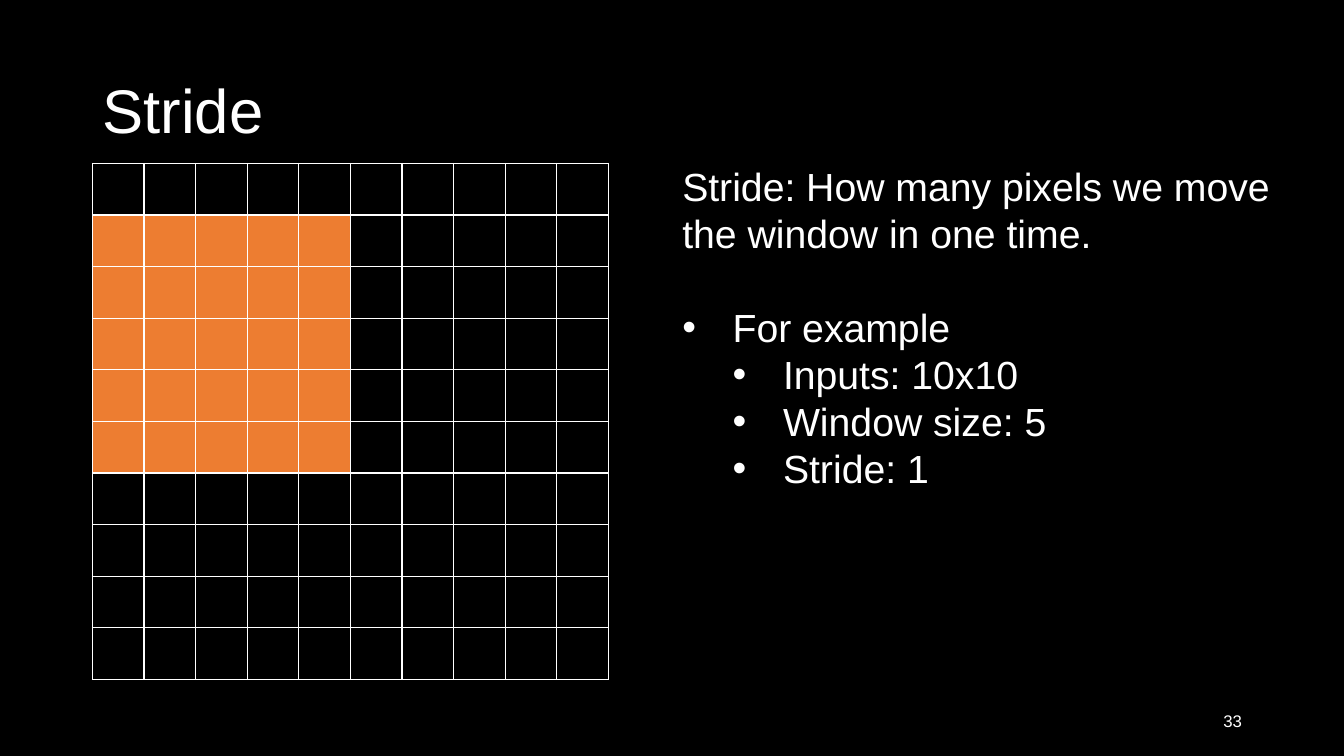
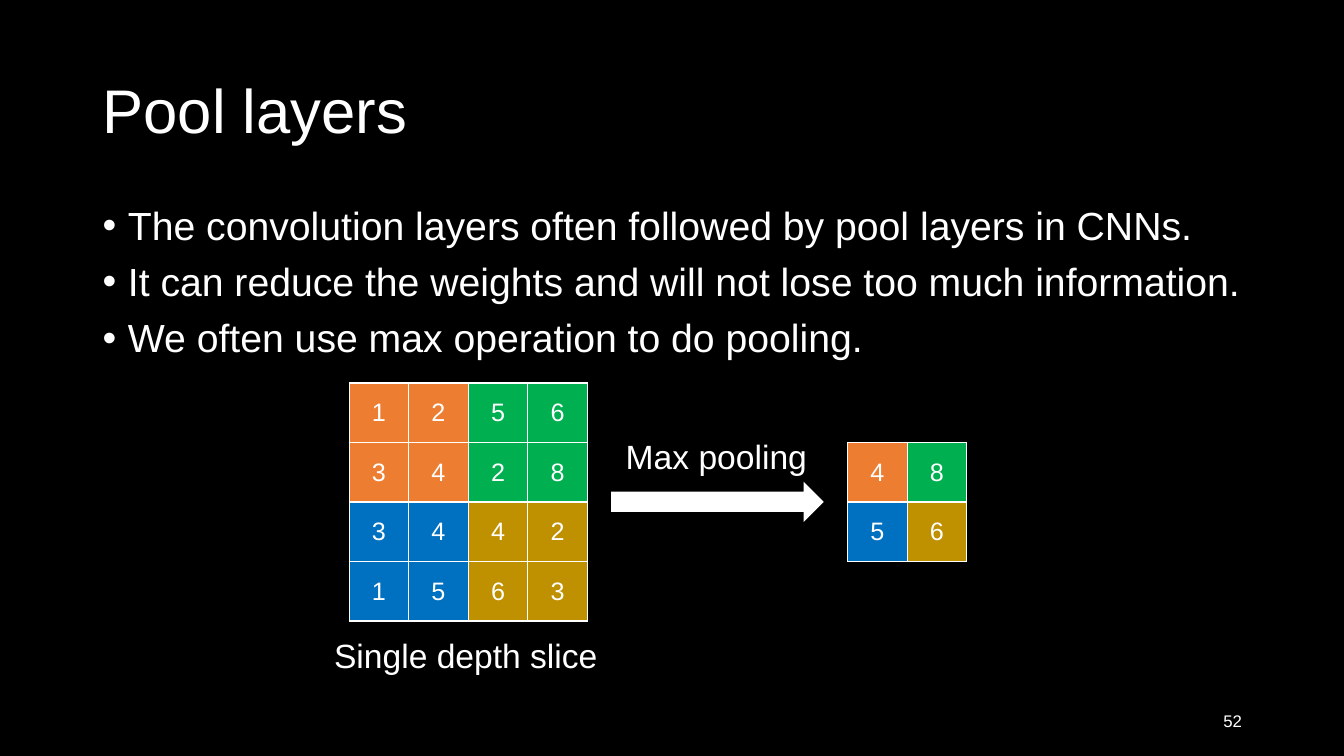
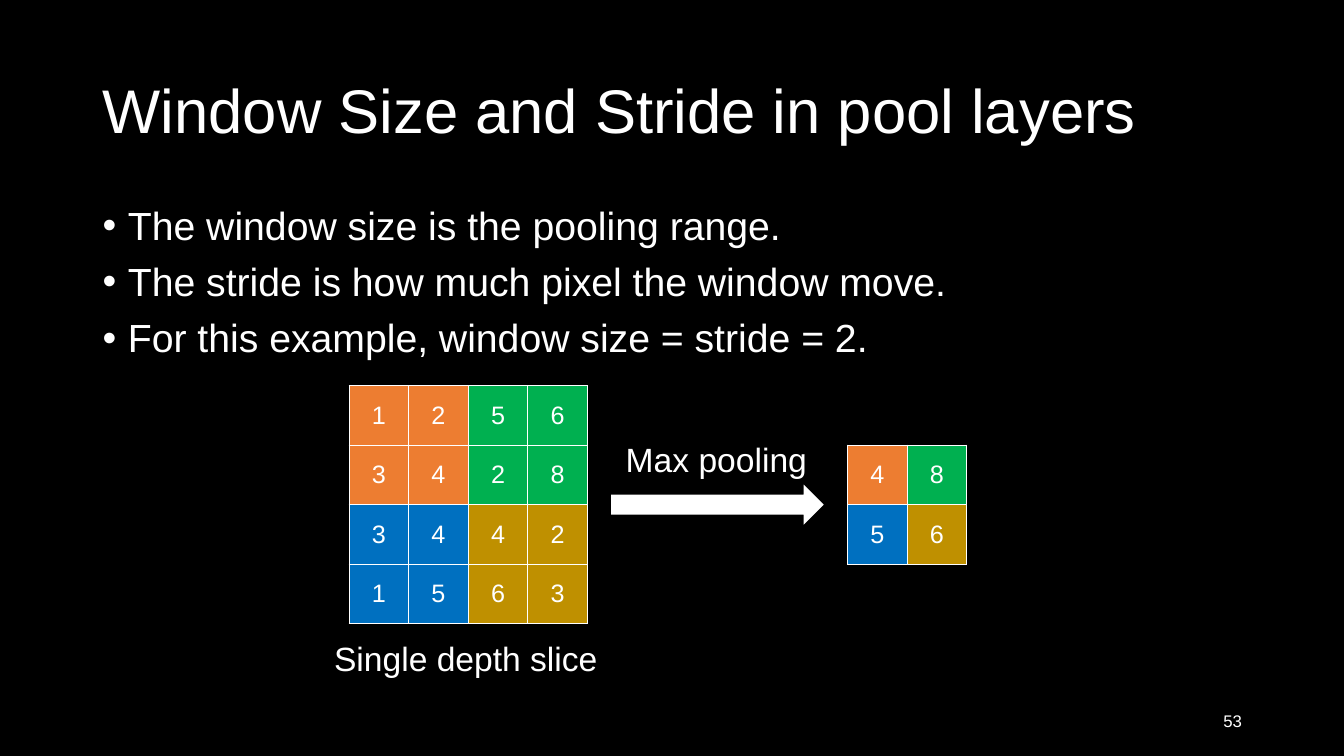
"""Build three slides on stride and max pooling in convolutional networks."""
import dataclasses
import typing

import lxml.etree
import pptx
import pptx.dml.color
import pptx.enum.shapes
import pptx.enum.text
import pptx.oxml.ns
import pptx.util

Cm = pptx.util.Cm
Pt = pptx.util.Pt
RGBColor = pptx.dml.color.RGBColor
Align = pptx.enum.text.PP_ALIGN
Anchor = pptx.enum.text.MSO_ANCHOR
qn = pptx.oxml.ns.qn

BLACK = RGBColor(0x00, 0x00, 0x00)
WHITE = RGBColor(0xFF, 0xFF, 0xFF)
ORANGE = RGBColor(0xED, 0x7D, 0x31)
GREEN = RGBColor(0x00, 0xB0, 0x50)
BLUE = RGBColor(0x00, 0x70, 0xC0)
GOLD = RGBColor(0xBF, 0x90, 0x00)
FONT = "Arial"
BODY_SIZE = 28
QUADRANTS = ((ORANGE, GREEN), (BLUE, GOLD))
DEPTH_SLICE = ((1, 2, 5, 6), (3, 4, 2, 8), (3, 4, 4, 2), (1, 5, 6, 3))
POOL_WINDOW = 2
POOL_CELL = 1.5


@dataclasses.dataclass(frozen=True)
class Area:
    """A rectangle in centimetres."""
    left: float
    top: float
    width: float
    height: float

    def lengths(self) -> tuple[pptx.util.Length, ...]:
        """Return left, top, width and height as lengths."""
        return tuple(Cm(value) for value in dataclasses.astuple(self))


@dataclasses.dataclass(frozen=True)
class Line:
    """A paragraph of a list; a hang of zero means no bullet."""
    text: str
    indent: float = 0.64
    hang: float = 0.64
    spacing: float = 0.9
    before: float = 10
    level: int = 0


@dataclasses.dataclass(frozen=True)
class Cell:
    """The text and fill of a grid cell."""
    text: str = ""
    fill: RGBColor | None = None


@dataclasses.dataclass(frozen=True)
class Topic:
    """The content of a pooling page."""
    title: str
    number: int
    points: tuple[str, ...]
    diagram_top: float


TITLE_AREA = Area(2.33, 1.01, 29.21, 3.68)
BODY_AREA = Area(2.33, 5.07, 29.21, 12.09)
STRIDE_AREA = Area(16.94, 3.96, 15.77, 8.64)
NUMBER_AREA = Area(23.93, 17.65, 7.62, 1.02)

STRIDE_LINES = (
    Line("Stride: How many pixels we move\vthe window in one time.", 0, 0, 1, 0),
    Line("For example", 1.27, 1.27, 1, 33.6),
    *(Line(text, 2.54, 1.27, 1, 0, 1)
      for text in ("Inputs: 10x10", "Window size: 5", "Stride: 1")),
)

TOPICS = (
    Topic("Pool layers", 52, (
        "The convolution layers often followed by pool layers in CNNs.",
        "It can reduce the weights and will not lose too much information.",
        "We often use max operation to do pooling."), 9.65),
    Topic("Window Size and Stride in pool layers", 53, (
        "The window size is the pooling range.",
        "The stride is how much pixel the window move.",
        "For this example, window size = stride = 2."), 9.72),
)


def write(para: typing.Any, text: str, *, size: float, align: Align = Align.LEFT,
          spacing: float = 1, before: float = 0) -> None:
    """Put formatted text in a paragraph."""
    para.text = text
    para.alignment = align
    para.line_spacing = spacing
    para.space_before = Pt(before)
    para.space_after = Pt(0)
    for span in para.runs:
        span.font.name = FONT
        span.font.size = Pt(size)
        span.font.color.rgb = WHITE


def place(box: typing.Any, area: Area) -> None:
    """Move and size a shape."""
    box.left, box.top, box.width, box.height = area.lengths()


def set_bullet(para: typing.Any, line: Line) -> None:
    """Give a paragraph its indents and bullet."""
    properties = para._p.get_or_add_pPr()
    properties.set("marL", str(Cm(line.indent)))
    properties.set("indent", str(-Cm(line.hang)))
    if line.hang:
        lxml.etree.SubElement(properties, qn("a:buFont"), typeface=FONT)
        lxml.etree.SubElement(properties, qn("a:buChar"), char="•")
    else:
        lxml.etree.SubElement(properties, qn("a:buNone"))


def add_label(page: typing.Any, area: Area, text: str, *, size: float,
              align: Align = Align.LEFT, anchor: Anchor = Anchor.TOP,
              wrap: bool = False) -> None:
    """Add a one-line text box."""
    frame = page.shapes.add_textbox(*area.lengths()).text_frame
    frame.word_wrap = wrap
    frame.vertical_anchor = anchor
    write(frame.paragraphs[0], text, size=size, align=align)


def add_page(deck: typing.Any, title: str, number: int, body_area: Area,
             lines: typing.Iterable[Line]) -> typing.Any:
    """Add a page with its title, list and number."""
    page = deck.slides.add_slide(deck.slide_layouts[1])
    heading, body = page.placeholders
    for box, area, anchor in ((heading, TITLE_AREA, Anchor.MIDDLE),
                              (body, body_area, Anchor.TOP)):
        place(box, area)
        box.text_frame.word_wrap = True
        box.text_frame.auto_size = pptx.enum.text.MSO_AUTO_SIZE.NONE
        box.text_frame.vertical_anchor = anchor
    write(heading.text_frame.paragraphs[0], title, size=44, spacing=0.9)
    for index, line in enumerate(lines):
        frame = body.text_frame
        para = frame.add_paragraph() if index else frame.paragraphs[0]
        para.level = line.level
        write(para, line.text, size=BODY_SIZE, spacing=line.spacing, before=line.before)
        set_bullet(para, line)
    add_label(page, NUMBER_AREA, str(number), size=12, align=Align.RIGHT,
              anchor=Anchor.MIDDLE, wrap=True)
    return page


def add_borders(cell: typing.Any) -> None:
    """Draw thin white lines around a cell."""
    properties = cell._tc.get_or_add_tcPr()
    for side in ("a:lnL", "a:lnR", "a:lnT", "a:lnB"):
        edge = lxml.etree.SubElement(properties, qn(side), w=str(Pt(1)))
        fill = lxml.etree.SubElement(edge, qn("a:solidFill"))
        lxml.etree.SubElement(fill, qn("a:srgbClr"), val=str(WHITE))


def add_grid(page: typing.Any, left: float, top: float, size: float,
             cells: list[list[Cell]]) -> None:
    """Add a table of square cells."""
    rows, columns = len(cells), len(cells[0])
    area = Area(left, top, columns * size, rows * size)
    table = page.shapes.add_table(rows, columns, *area.lengths()).table
    table.first_row = table.horz_banding = False
    for track in (*table.rows, *table.columns):
        if hasattr(track, "height"):
            track.height = Cm(size)
        else:
            track.width = Cm(size)
    for row, contents in enumerate(cells):
        for column, content in enumerate(contents):
            cell = table.cell(row, column)
            cell.vertical_anchor = Anchor.MIDDLE
            add_borders(cell)
            if content.fill is None:
                cell.fill.background()
            else:
                cell.fill.solid()
                cell.fill.fore_color.rgb = content.fill
            if content.text:
                write(cell.text_frame.paragraphs[0], content.text, size=18,
                      align=Align.CENTER)


def quadrant_cells(values: typing.Sequence[typing.Sequence[int]]) -> list[list[Cell]]:
    """Colour a square of numbers by quadrant."""
    half = len(values) // 2
    return [[Cell(str(value), QUADRANTS[row // half][column // half])
             for column, value in enumerate(numbers)]
            for row, numbers in enumerate(values)]


def max_pool(values: typing.Sequence[typing.Sequence[int]], window: int) -> list[list[int]]:
    """Return the largest number in each window."""
    starts = range(0, len(values), window)
    return [[max(max(numbers[column:column + window])
                 for numbers in values[row:row + window])
             for column in starts] for row in starts]


def add_pooling(page: typing.Any, top: float) -> None:
    """Draw the depth slice, the arrow and the pooled result."""
    add_grid(page, 8.8, top, POOL_CELL, quadrant_cells(DEPTH_SLICE))
    add_label(page, Area(8.17, top + 6.22, 7.21, 1.27), "Single depth slice", size=24)
    arrow = page.shapes.add_shape(pptx.enum.shapes.MSO_SHAPE.RIGHT_ARROW,
                                  *Area(15.4, top + 2.49, 5.36, 1.01).lengths())
    arrow.shadow.inherit = False
    arrow.fill.solid()
    arrow.fill.fore_color.rgb = WHITE
    arrow.line.fill.background()
    add_label(page, Area(15.52, top + 1.21, 5.13, 1.27), "Max pooling", size=24)
    add_grid(page, 21.36, top + POOL_CELL, POOL_CELL,
             quadrant_cells(max_pool(DEPTH_SLICE, POOL_WINDOW)))


def main() -> None:
    """Build and save the deck."""
    deck = pptx.Presentation()
    deck.slide_width, deck.slide_height = Cm(33.87), Cm(19.05)
    backdrop = deck.slide_master.background.fill
    backdrop.solid()
    backdrop.fore_color.rgb = BLACK

    page = add_page(deck, "Stride", 33, STRIDE_AREA, STRIDE_LINES)
    inputs = [[Cell(fill=ORANGE if 1 <= row <= 5 and column < 5 else None)
               for column in range(10)] for row in range(10)]
    add_grid(page, 2.33, 4.12, 1.3, inputs)

    for topic in TOPICS:
        page = add_page(deck, topic.title, topic.number, BODY_AREA,
                        [Line(text) for text in topic.points])
        add_pooling(page, topic.diagram_top)
    deck.save("out.pptx")


if __name__ == "__main__":
    main()
